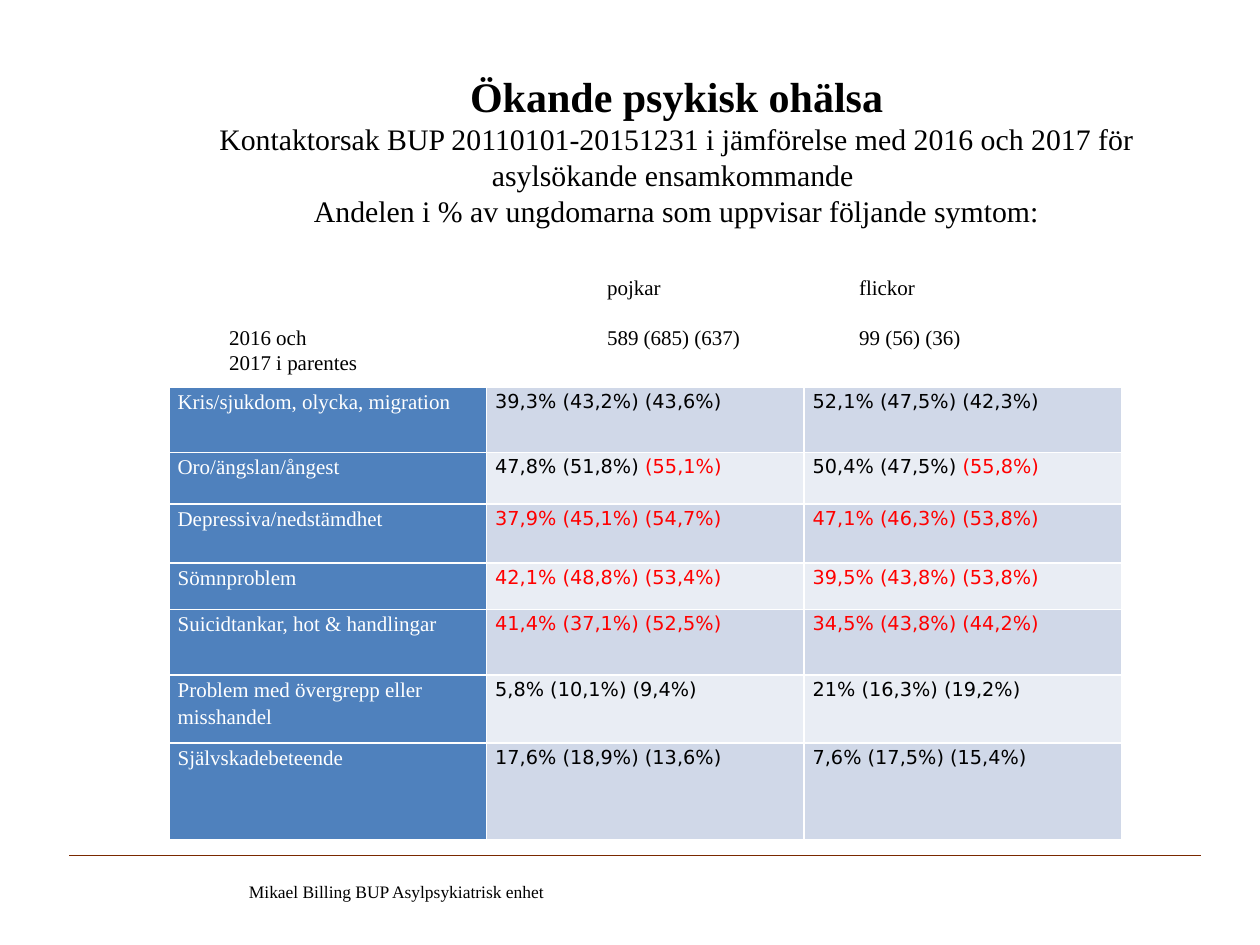
import lxml.etree
import pptx
import pptx.dml.color
import pptx.enum.shapes
import pptx.enum.text
import pptx.oxml.ns
import pptx.util

Inches = pptx.util.Inches
COLORS = {
    "text": "000000", "alert": "FF0000", "white": "FFFFFF", "label": "4F81BD",
    "band_dark": "D0D8E8", "band_light": "E9EDF4", "rule": "7A2900",
}
SERIF = "Times New Roman"
SANS = "DejaVu Sans"


def rgb(name):
    return pptx.dml.color.RGBColor.from_string(COLORS[name])


def format_runs(para, size, font=SERIF, color="text", bold=False):
    for span in para.runs:
        span.font.size = pptx.util.Pt(size)
        span.font.name = font
        span.font.bold = bold
        span.font.color.rgb = rgb(color)


deck = pptx.Presentation()
deck.slide_width = Inches(10)
deck.slide_height = Inches(7.5)
page = deck.slides.add_slide(deck.slide_layouts[5])

footer = page.shapes.add_textbox(Inches(1.1), Inches(6.94), Inches(4.09), Inches(0.27))
footer.text_frame.word_wrap = True
footer.text_frame.text = "Mikael Billing BUP Asylpsykiatrisk enhet"
footer.text_frame.paragraphs[0].alignment = pptx.enum.text.PP_ALIGN.CENTER
format_runs(footer.text_frame.paragraphs[0], 10)

rule = page.shapes.add_connector(
    pptx.enum.shapes.MSO_CONNECTOR.STRAIGHT,
    Inches(0.55), Inches(6.79), Inches(9.53), Inches(6.79))
rule.line.color.rgb = rgb("rule")
rule.line.width = pptx.util.Pt(0.75)
lxml.etree.SubElement(rule._element.spPr, pptx.oxml.ns.qn("a:effectLst"))

title = page.shapes.title
title.left, title.top = Inches(1.07), Inches(0.51)
title.width, title.height = Inches(8.6), Inches(1.71)
title.text_frame.word_wrap = True
title.text_frame.auto_size = pptx.enum.text.MSO_AUTO_SIZE.NONE
title.text_frame.vertical_anchor = pptx.enum.text.MSO_ANCHOR.TOP
title.text_frame.text = (
    "Ökande psykisk ohälsa\n"
    "Kontaktorsak BUP 20110101-20151231 i jämförelse med 2016 och 2017 för "
    "asylsökande ensamkommande \n"
    "Andelen i % av ungdomarna som uppvisar följande symtom:")
for index, para in enumerate(title.text_frame.paragraphs):
    para.alignment = pptx.enum.text.PP_ALIGN.CENTER
    format_runs(para, 17 if index else 24, bold=index == 0)

symptoms = [
    ("Kris/sjukdom, olycka, migration", 0.52,
     ("39,3% (43,2%) (43,6%)", ""), ("52,1% (47,5%) (42,3%)", "")),
    ("Oro/ängslan/ångest", 0.41,
     ("47,8% (51,8%) ", "(55,1%)"), ("50,4% (47,5%) ", "(55,8%)")),
    ("Depressiva/nedstämdhet", 0.47,
     ("", "37,9% (45,1%) (54,7%)"), ("", "47,1% (46,3%) (53,8%)")),
    ("Sömnproblem", 0.37,
     ("", "42,1% (48,8%) (53,4%)"), ("", "39,5% (43,8%) (53,8%)")),
    ("Suicidtankar, hot & handlingar", 0.52,
     ("", "41,4% (37,1%) (52,5%)"), ("", "34,5% (43,8%) (44,2%)")),
    ("Problem med övergrepp eller misshandel", 0.54,
     ("5,8% (10,1%) (9,4%)", ""), ("21% (16,3%) (19,2%)", "")),
    ("Självskadebeteende", 0.77,
     ("17,6% (18,9%) (13,6%)", ""), ("7,6% (17,5%) (15,4%)", "")),
]
table = page.shapes.add_table(
    len(symptoms), 3, Inches(1.34), Inches(3.07), Inches(7.57), Inches(3.6)).table
table.first_row = False
for column in table.columns:
    column.width = Inches(2.52)

for row, (label, height, boys, girls) in enumerate(symptoms):
    table.rows[row].height = Inches(height)
    band = "band_light" if row % 2 else "band_dark"
    for column, parts in enumerate([(label, ""), boys, girls]):
        cell = table.cell(row, column)
        cell.margin_left = cell.margin_right = Inches(0.07)
        cell.margin_top = cell.margin_bottom = 0
        cell.fill.solid()
        cell.fill.fore_color.rgb = rgb(band if column else "label")
        para = cell.text_frame.paragraphs[0]
        para.line_spacing = 1.15
        for text, color in zip(parts, ("text", "alert")):
            if text:
                span = para.add_run()
                span.text = text
                span.font.size = pptx.util.Pt(11 if column else 12)
                span.font.name = SANS if column else SERIF
                span.font.color.rgb = rgb(color if column else "white")
        for order, edge in enumerate(("lnL", "lnR", "lnT", "lnB")):
            border = pptx.oxml.parse_xml(
                f'<a:{edge} {pptx.oxml.ns.nsdecls("a")} w="12700"><a:solidFill>'
                f'<a:srgbClr val="{COLORS["white"]}"/></a:solidFill></a:{edge}>')
            cell._tc.get_or_add_tcPr().insert(order, border)

header = page.shapes.add_textbox(Inches(1.72), Inches(2.22), Inches(6.43), Inches(0.71))
header.text_frame.word_wrap = True
header.text_frame.vertical_anchor = pptx.enum.text.MSO_ANCHOR.MIDDLE
header.text_frame.text = (
    "\tpojkar\tflickor\n2016 och\t589 (685) (637)\t99 (56) (36)\n2017 i parentes")
for para in header.text_frame.paragraphs:
    tabs = lxml.etree.SubElement(para._p.get_or_add_pPr(), pptx.oxml.ns.qn("a:tabLst"))
    for stop in (3, 5):
        lxml.etree.SubElement(
            tabs, pptx.oxml.ns.qn("a:tab"), pos=str(Inches(stop)), algn="l")
    format_runs(para, 12)
header.text_frame.paragraphs[1].space_before = pptx.util.Pt(14)

deck.save("out.pptx")
